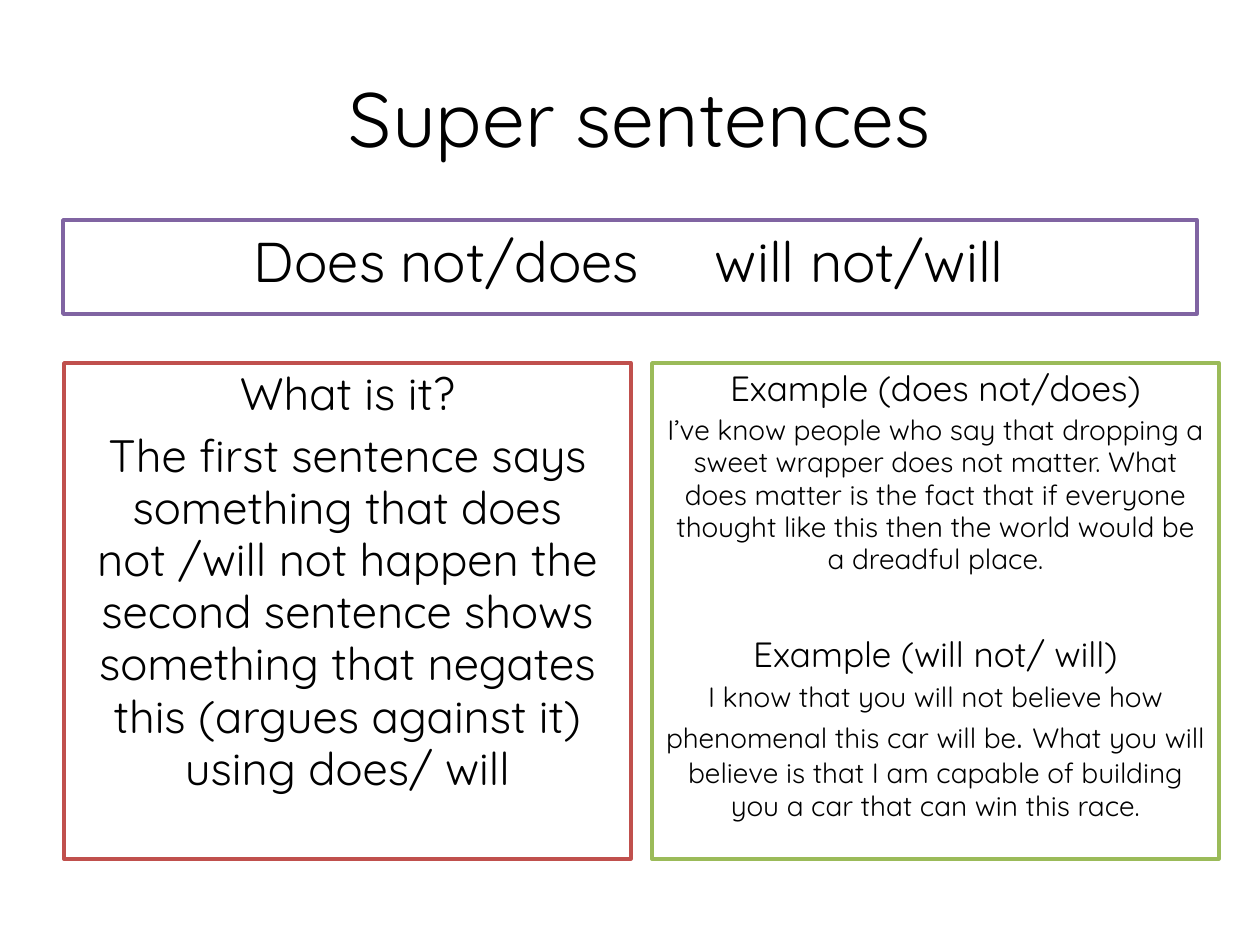
import pptx
import pptx.util
import pptx.dml.color
import pptx.enum.shapes
import pptx.enum.text
import pptx.oxml
import pptx.oxml.ns

FONT = "Quicksand"
COLORS = {"text": "000000", "paper": "FFFFFF", "purple": "8064A2",
          "red": "C0504D", "green": "9BBB59"}
EMU_PER_PX = 914400 // 126
INSET_X, INSET_Y = 13, 6

# Content: paragraphs are (space before in pt, line spacing, [(text, size)])
TITLE = "Super sentences"
PATTERNS = ("Does not/does", "will not/will")
PATTERN_STARTS = (191, 652)  # px from the left edge of the pattern box
DEFINITION = [
    (5.2, 0.96, [("What is it?", 25.9)]),
    (5.2, 0.96, [("The first sentence says something that does not /will not "
                  "happen the second sentence shows something that negates this "
                  "(argues against it) using does/ will", 25.9)]),
]
EXAMPLES = [
    (4, 0.96, [("Example (does not/does)", 20)]),
    (3.2, 0.96, [("I’ve know people who say that dropping a sweet wrapper does not "
                  "matter. What does matter is the fact that if everyone thought "
                  "like this then the world would be a dreadful place.", 16)]),
    (32, 1.0, [("Example (will not/ will)", 20)]),
    (3.2, 1.0, [("I know that you will not believe how phenomenal this car will be", 16),
                (". ", 20),
                ("What you will believe is that I am capable of building you a car "
                 "that can win this race.", 16)]),
]
BOXES = [
    {"at": (63, 220, 1134, 94), "line": "purple", "align": "LEFT",
     "inset": PATTERN_STARTS[0],
     "paragraphs": [(6.4, 1.0, [("\t".join(PATTERNS), 32)])]},
    {"at": (64, 363, 567, 496), "line": "red", "align": "CENTER",
     "inset": INSET_X, "paragraphs": DEFINITION},
    {"at": (652, 363, 567, 496), "line": "green", "align": "CENTER",
     "inset": INSET_X, "paragraphs": EXAMPLES},
]


def px(length):
    return pptx.util.Emu(length * EMU_PER_PX)


def rgb(name):
    return pptx.dml.color.RGBColor.from_string(COLORS[name])


def set_all(target, values):
    for name, value in values.items():
        setattr(target, name, value)


def add_run(paragraph, text, size):
    run = paragraph.add_run()
    run.text = text
    set_all(run.font, {"name": FONT, "size": pptx.util.Pt(size)})
    run.font.color.rgb = rgb("text")


def format_frame(frame, inset_left, anchor):
    set_all(frame, {
        "word_wrap": True, "auto_size": pptx.enum.text.MSO_AUTO_SIZE.NONE,
        "vertical_anchor": anchor,
        "margin_left": px(inset_left), "margin_right": px(INSET_X),
        "margin_top": px(INSET_Y), "margin_bottom": px(INSET_Y)})


def add_box(slide, box):
    panel = slide.shapes.add_shape(
        pptx.enum.shapes.MSO_SHAPE.RECTANGLE, *map(px, box["at"]))
    panel.shadow.inherit = False
    panel.fill.solid()
    panel.fill.fore_color.rgb = rgb("paper")
    panel.line.color.rgb = rgb(box["line"])
    panel.line.width = pptx.util.Pt(2)
    frame = panel.text_frame
    format_frame(frame, box["inset"], pptx.enum.text.MSO_ANCHOR.TOP)
    for index, (before, spacing, runs) in enumerate(box["paragraphs"]):
        paragraph = frame.add_paragraph() if index else frame.paragraphs[0]
        set_all(paragraph, {
            "alignment": getattr(pptx.enum.text.PP_ALIGN, box["align"]),
            "space_before": pptx.util.Pt(before), "line_spacing": spacing})
        for text, size in runs:
            add_run(paragraph, text, size)
    return panel


def add_tab_stop(paragraph, position):
    stops = pptx.oxml.parse_xml(
        f'<a:tabLst {pptx.oxml.ns.nsdecls("a")}>'
        f'<a:tab pos="{position}" algn="l"/></a:tabLst>')
    properties = paragraph._p.get_or_add_pPr()
    properties.insert_element_before(stops, "a:defRPr", "a:extLst")


def main():
    deck = pptx.Presentation()
    deck.slide_width, deck.slide_height = px(1260), px(945)
    slide = deck.slides.add_slide(deck.slide_layouts[5])

    # Title, set slightly right of centre
    title = slide.shapes.title
    set_all(title, dict(zip(("left", "top", "width", "height"),
                            map(px, (63, 38, 1134, 157)))))
    format_frame(title.text_frame, INSET_X + 20, pptx.enum.text.MSO_ANCHOR.MIDDLE)
    heading = title.text_frame.paragraphs[0]
    heading.alignment = pptx.enum.text.PP_ALIGN.CENTER
    add_run(heading, TITLE, 44)

    # Pattern strip, definition and examples
    pattern_box, *_ = [add_box(slide, box) for box in BOXES]
    add_tab_stop(pattern_box.text_frame.paragraphs[0],
                 px(PATTERN_STARTS[1] - PATTERN_STARTS[0]))

    deck.save("out.pptx")


if __name__ == "__main__":
    main()
